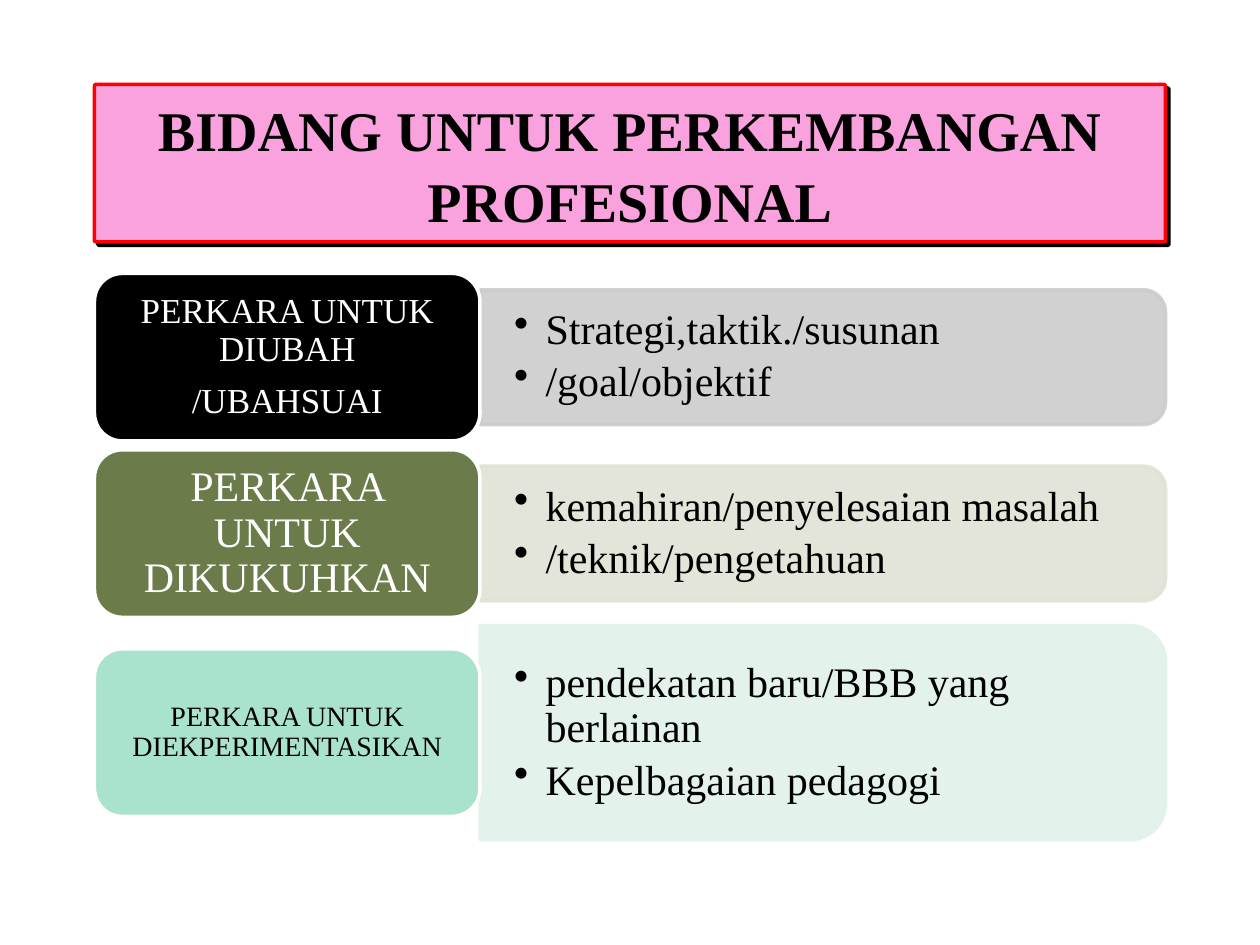
"""Builds a slide on areas of professional development, one labelled row per area."""
from lxml import etree
from pptx import Presentation, util as u
from pptx.dml.color import RGBColor
from pptx.enum import shapes, text
from pptx.oxml import ns

FONT = "Times New Roman"
COLORS = {
    "black": "000000", "white": "FFFFFF", "pink": "FAA2DD", "red": "FF0000",
    "grey": "CCCCCC", "olive": "6C7B4A", "pale_olive": "DFE3D4",
    "mint": "AAE3CB", "pale_mint": "E1F2EA",
}
LEFT, LABEL_WIDTH, LABEL_HEIGHT, PANEL_WIDTH = 0.75, 3.06, 1.33, 5.44
AREAS = [
    dict(label=["PERKARA UNTUK DIUBAH", "/UBAHSUAI"], size=20, ink="white",
         fill="black", tint="grey", top=2.17, panel_height=1.07,
         points=["Strategi,taktik./susunan", "/goal/objektif"]),
    dict(label=["PERKARA UNTUK DIKUKUHKAN"], size=24, ink="white",
         fill="olive", tint="pale_olive", top=3.57, panel_height=1.07,
         points=["kemahiran/penyelesaian masalah", "/teknik/pengetahuan"]),
    dict(label=["PERKARA UNTUK DIEKPERIMENTASIKAN"], size=16, ink="black",
         fill="mint", tint="pale_mint", top=5.15, panel_height=1.7,
         points=["pendekatan baru/BBB yang berlainan", "Kepelbagaian pedagogi"]),
]


def rgb(name):
    """Return the named colour."""
    return RGBColor.from_string(COLORS[name])


def add_box(slide, kind, left, top, width, height, fill, line):
    """Add a filled and outlined preset shape without a shadow."""
    box = slide.shapes.add_shape(kind, *map(u.Inches, (left, top, width, height)))
    box.shadow.inherit = False
    box.fill.solid()
    box.fill.fore_color.rgb = rgb(fill)
    box.line.color.rgb = rgb(line)
    box.line.width = u.Pt(2)
    return box


def write(holder, lines, size, color="black", bold=False, bullet=False,
          spacing=0.9, after=0, inset=(0.1, 0.05)):
    """Write paragraphs into a shape or text box with one format."""
    frame = holder.text_frame
    frame.word_wrap = True
    frame.vertical_anchor = text.MSO_ANCHOR.MIDDLE
    frame.margin_left = frame.margin_right = u.Inches(inset[0])
    frame.margin_top = frame.margin_bottom = u.Inches(inset[1])
    for index, line in enumerate(lines):
        paragraph = frame.paragraphs[0] if index == 0 else frame.add_paragraph()
        if bullet:
            properties = paragraph._p.get_or_add_pPr()
            properties.set("marL", str(u.Inches(0.25)))
            properties.set("indent", str(u.Inches(-0.25)))
            etree.SubElement(properties, ns.qn("a:buChar"), char="•")
            paragraph.level = 1
        paragraph.alignment = text.PP_ALIGN.LEFT if bullet else text.PP_ALIGN.CENTER
        paragraph.line_spacing = spacing
        paragraph.space_after = u.Pt(after)
        run = paragraph.add_run()
        run.text = line
        run.font.name = FONT
        run.font.size = u.Pt(size)
        run.font.bold = bold
        run.font.color.rgb = rgb(color)


def add_text(slide, lines, left, top, width, height, **style):
    """Add a text box holding the given paragraphs."""
    box = slide.shapes.add_textbox(*map(u.Inches, (left, top, width, height)))
    write(box, lines, **style)


def add_title(slide):
    """Add the framed title with its hard offset shadow."""
    title = add_box(slide, shapes.MSO_SHAPE.ROUNDED_RECTANGLE,
                    LEFT, 0.67, 8.5, 1.25, "pink", "red")
    title.adjustments[0] = 0.01
    effects = title._element.spPr.find(ns.qn("a:effectLst"))
    shadow = etree.SubElement(effects, ns.qn("a:outerShdw"), blurRad="0",
                              dist=str(u.Pt(2.8)), dir="2700000", algn="ctr",
                              rotWithShape="0")
    etree.SubElement(shadow, ns.qn("a:srgbClr"), val=COLORS["black"])
    write(title, ["BIDANG UNTUK PERKEMBANGAN PROFESIONAL"], 32, bold=True, spacing=1.05)


def add_panel(slide, middle, height, tint, points):
    """Add a translucent panel rounded on its right side, with bullet points."""
    left = LEFT + LABEL_WIDTH
    panel = add_box(slide, shapes.MSO_SHAPE.ROUND_2_SAME_RECTANGLE,
                    left + (PANEL_WIDTH - height) / 2, middle - PANEL_WIDTH / 2,
                    height, PANEL_WIDTH, tint, tint)
    panel.rotation = 90
    for color in panel._element.spPr.iter(ns.qn("a:srgbClr")):
        etree.SubElement(color, ns.qn("a:alpha"), val="90000")
    add_text(slide, points, left, middle - 0.45 * height, PANEL_WIDTH - 0.05,
             0.9 * height, size=24, bullet=True, after=4, inset=(0.27, 0.14))


def add_label(slide, top, lines, size, ink, fill):
    """Add a rounded label whose insets follow its text size."""
    edge = 0.06
    add_box(slide, shapes.MSO_SHAPE.ROUNDED_RECTANGLE, LEFT, top,
            LABEL_WIDTH, LABEL_HEIGHT, fill, "white")
    add_text(slide, lines, LEFT + edge, top + edge, LABEL_WIDTH - 2 * edge,
             LABEL_HEIGHT - 2 * edge, size=size, color=ink, after=0.4 * size,
             inset=(size / 240, size / 480))


def main():
    """Build and save the slide."""
    deck = Presentation()
    deck.slide_width, deck.slide_height = u.Inches(10), u.Inches(7.5)
    slide = deck.slides.add_slide(deck.slide_layouts[6])
    add_title(slide)
    for area in AREAS:
        middle = area["top"] + LABEL_HEIGHT / 2
        add_panel(slide, middle, area["panel_height"], area["tint"], area["points"])
        add_label(slide, area["top"], area["label"], area["size"], area["ink"], area["fill"])
    deck.save("out.pptx")


if __name__ == "__main__":
    main()
